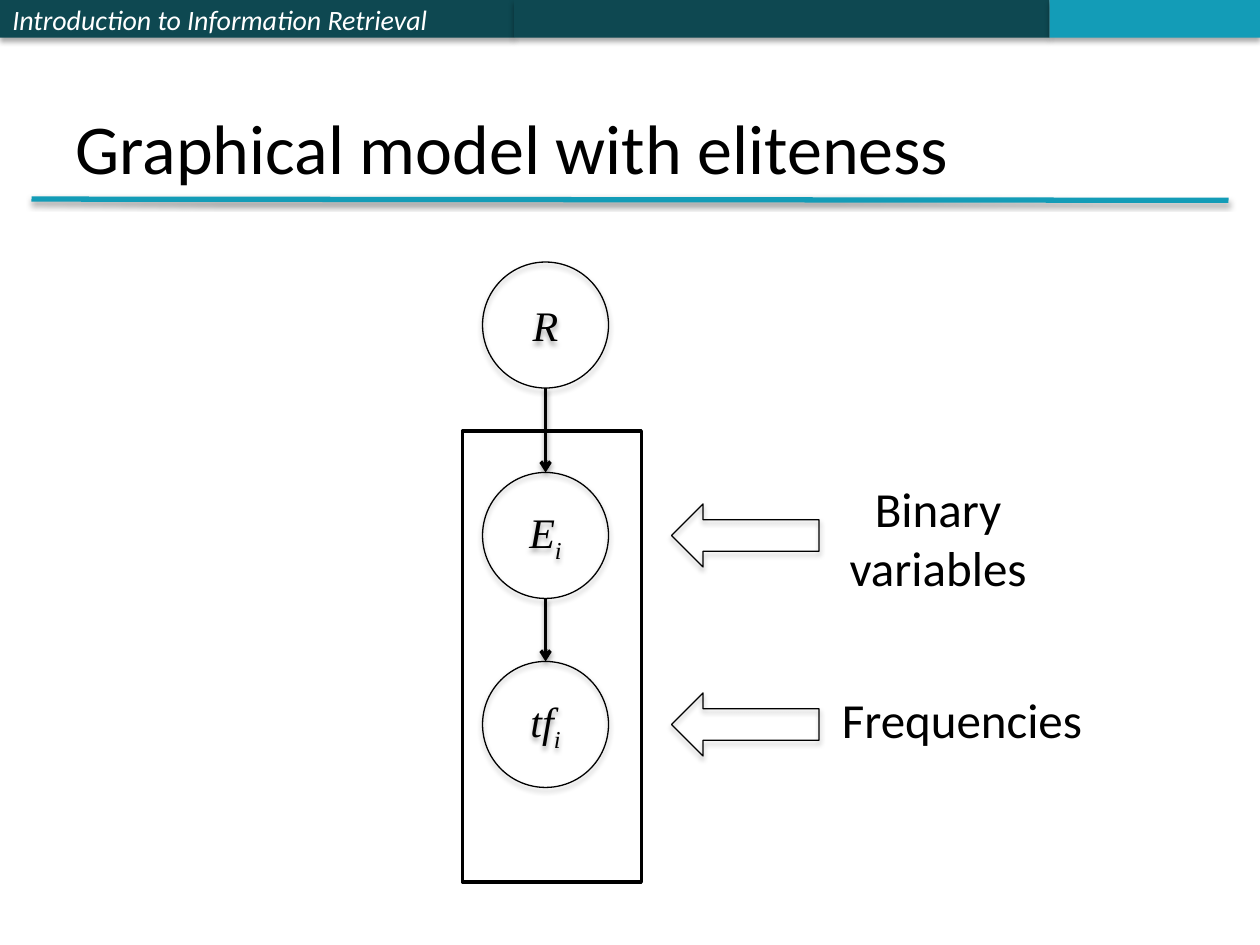
from dataclasses import dataclass

from lxml.etree import SubElement
from pptx import Presentation
from pptx.dml.color import RGBColor
from pptx.enum.shapes import MSO_CONNECTOR, MSO_SHAPE
from pptx.enum.text import MSO_ANCHOR, MSO_AUTO_SIZE, PP_ALIGN
from pptx.oxml.ns import qn
from pptx.util import Inches, Pt


@dataclass(frozen=True)
class Theme:
    ink: RGBColor = RGBColor(0x00, 0x00, 0x00)
    paper: RGBColor = RGBColor(0xFF, 0xFF, 0xFF)
    dark_band: RGBColor = RGBColor(0x0E, 0x48, 0x51)
    accent: RGBColor = RGBColor(0x13, 0x9C, 0xB7)
    sans: str = "Calibri"
    serif: str = "Times New Roman"
    header_size: int = 16
    title_size: int = 40
    node_size: int = 24
    label_size: int = 28
    thin: float = 0.75
    medium: float = 2
    thick: float = 3


class SlideBuilder:
    def __init__(self, page, theme):
        self.page = page
        self.theme = theme

    def style_span(self, span, size, color, font=None, italic=False):
        span.font.name = font or self.theme.sans
        span.font.size = Pt(size)
        span.font.color.rgb = color
        span.font.italic = italic

    def cast_shadow(self, item, opacity=35, distance=1.8):
        """Give a shape or connector a soft shadow straight below it."""
        effects = SubElement(item._element.spPr, qn("a:effectLst"))
        shadow = SubElement(
            effects, qn("a:outerShdw"), blurRad=str(Pt(3.1)),
            dist=str(Pt(distance)), dir="5400000", rotWithShape="0")
        color = SubElement(shadow, qn("a:srgbClr"), val=str(self.theme.ink))
        SubElement(color, qn("a:alpha"), val=str(opacity * 1000))

    def shape(self, kind, left, top, width, height, fill=None, line=None, shadow=True):
        shape = self.page.shapes.add_shape(
            kind, Inches(left), Inches(top), Inches(width), Inches(height))
        if fill is None:
            shape.fill.background()
        else:
            shape.fill.solid()
            shape.fill.fore_color.rgb = fill
        if line is None:
            shape.line.fill.background()
        else:
            shape.line.color.rgb = self.theme.ink
            shape.line.width = Pt(line)
        if shadow:
            self.cast_shadow(shape)
        else:
            shape.shadow.inherit = False
        return shape

    def band(self, left, width, fill, text=""):
        band = self.shape(MSO_SHAPE.RECTANGLE, left, 0, width, 0.3, fill)
        if text:
            frame = band.text_frame
            frame.text = text
            frame.vertical_anchor = MSO_ANCHOR.MIDDLE
            para = frame.paragraphs[0]
            para.alignment = PP_ALIGN.LEFT
            self.style_span(para.runs[0], self.theme.header_size,
                            self.theme.paper, italic=True)

    def title(self, text):
        title = self.page.shapes.title
        title.left, title.top = Inches(0.5), Inches(0.3)
        title.width, title.height = Inches(9), Inches(1.25)
        frame = title.text_frame
        frame.text = text
        frame.auto_size = MSO_AUTO_SIZE.NONE
        frame.vertical_anchor = MSO_ANCHOR.BOTTOM
        para = frame.paragraphs[0]
        para.alignment = PP_ALIGN.LEFT
        self.style_span(para.runs[0], self.theme.title_size, self.theme.ink)

    def node(self, left, top, symbol, subscript=""):
        node = self.shape(MSO_SHAPE.OVAL, left, top, 1, 1, line=self.theme.thin)
        frame = node.text_frame
        frame.word_wrap = False
        frame.text = symbol
        frame.vertical_anchor = MSO_ANCHOR.MIDDLE
        para = frame.paragraphs[0]
        para.alignment = PP_ALIGN.CENTER
        if subscript:
            span = para.add_run()
            span.text = subscript
            span.font._element.set("baseline", "-25000")
        for span in para.runs:
            self.style_span(span, self.theme.node_size, self.theme.ink,
                            self.theme.serif, italic=True)

    def line(self, start, end, color, width, arrow=False):
        line = self.page.shapes.add_connector(
            MSO_CONNECTOR.STRAIGHT, *(Inches(value) for value in (*start, *end)))
        line.line.color.rgb = color
        line.line.width = Pt(width)
        if arrow:
            SubElement(line.line._get_or_add_ln(), qn("a:tailEnd"), type="arrow")
        self.cast_shadow(line, opacity=38, distance=1.6)

    def label(self, left, top, width, height, text):
        box = self.page.shapes.add_textbox(
            Inches(left), Inches(top), Inches(width), Inches(height))
        frame = box.text_frame
        frame.word_wrap = False
        frame.auto_size = MSO_AUTO_SIZE.SHAPE_TO_FIT_TEXT
        frame.text = text
        for para in frame.paragraphs:
            para.alignment = PP_ALIGN.CENTER
            self.style_span(para.runs[0], self.theme.label_size, self.theme.ink)


def main():
    deck = Presentation()
    deck.slide_width, deck.slide_height = Inches(10), Inches(7.5)
    theme = Theme()
    builder = SlideBuilder(deck.slides.add_slide(deck.slide_layouts[5]), theme)

    builder.band(0, 4.08, theme.dark_band, "Introduction to Information Retrieval")
    builder.band(4.08, 4.25, theme.dark_band)
    builder.band(8.33, 1.67, theme.accent)
    builder.line((0.25, 1.58), (9.75, 1.59), theme.accent, theme.thick)
    builder.title("Graphical model with eliteness")

    builder.shape(MSO_SHAPE.RECTANGLE, 3.67, 3.42, 1.42, 3.58,
                  line=theme.medium, shadow=False)
    node_left, node_center = 3.83, 4.33
    nodes = [(2.08, "R", ""), (3.75, "E", "i"), (5.25, "tf", "i")]
    for top, symbol, subscript in nodes:
        builder.node(node_left, top, symbol, subscript)
    for (upper, *_), (lower, *_) in zip(nodes, nodes[1:]):
        builder.line((node_center, upper + 1), (node_center, lower),
                     theme.ink, theme.medium, arrow=True)

    for top, *_ in nodes[1:]:
        builder.shape(MSO_SHAPE.LEFT_ARROW, 5.33, top + 0.25, 1.17, 0.5,
                      line=theme.thin)
    builder.label(6.63, 3.75, 1.63, 1.04, "Binary\nvariables")
    builder.label(6.57, 5.42, 2.13, 0.57, "Frequencies")

    deck.save("out.pptx")


if __name__ == "__main__":
    main()
